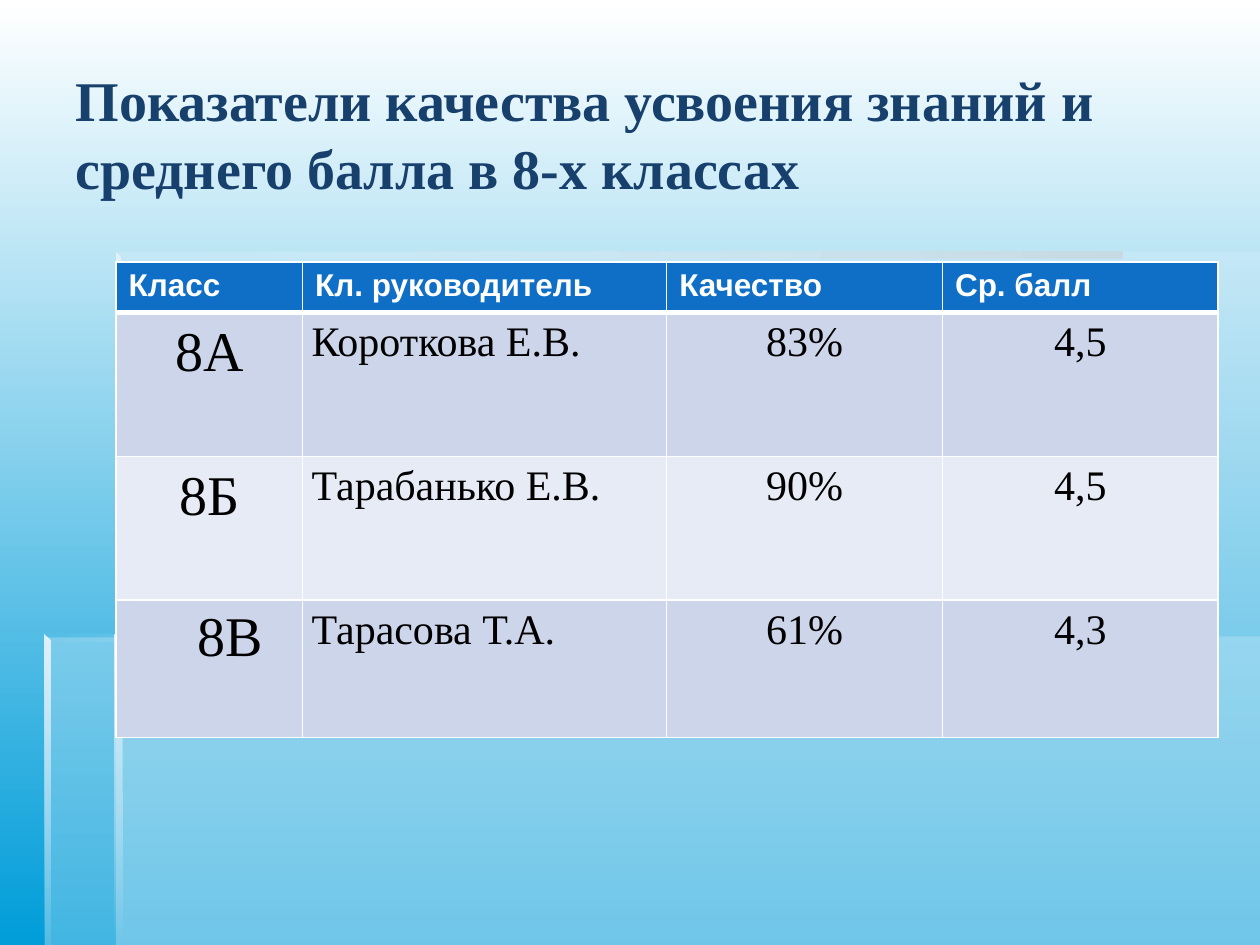
"""Builds the slide on knowledge quality and average marks in the 8th forms."""
from lxml import etree
from pptx import Presentation
from pptx.dml import color
from pptx.enum import text
from pptx.oxml import ns
from pptx.util import Cm, Pt

SERIF, SANS = "Times New Roman", "Arial"
WIDTH, HEIGHT = 25.4, 19.05
TITLE = "Показатели качества усвоения знаний и среднего балла в 8-х классах"
HEADINGS = ["Класс", "Кл. руководитель", "Качество", "Ср. балл"]
CLASSES = [
    ("8А", "Короткова Е.В.", "83%", "4,5"),
    ("8Б", "Тарабанько Е.В.", "90%", "4,5"),
    ("8В", "Тарасова Т.А.", "61%", "4,3"),
]
COLUMN_WIDTHS = [3.76, 7.34, 5.56, 5.56]
ROW_HEIGHTS = [1.02, 2.9, 2.9, 2.77]
BANDS = ["CCD5EA", "E7EBF5"]
PALE, LIGHT, GREY = "DBEFF9", "E0F1FA", "C9DBE4"
PANELS = [
    [(2.34, 12.83), (2.34, HEIGHT), (WIDTH, HEIGHT), (WIDTH, 12.83)],
    [(2.39, 12.85), (0.91, 12.85), (0.91, HEIGHT), (WIDTH, HEIGHT), (WIDTH, 5.08), (2.39, 5.08)],
]
ACROSS, DOWN = 0, 270
EDGES = [
    ([(2.34, 5.08), (2.34, 5.21), (22.63, 5.21), (22.63, 5.08)], ACROSS, (PALE, 0), (GREY, 100)),
    ([(2.34, 5.08), (2.34, 12.95), (2.46, 12.95), (2.44, 5.18)], DOWN, (LIGHT, 100), (PALE, 100)),
    ([(2.31, HEIGHT), (2.46, HEIGHT), (2.44, 12.9), (2.31, 12.8)], DOWN, (LIGHT, 100), (PALE, 0)),
    ([(0.89, 12.8), (0.89, 12.93), (13.59, 12.93), (13.59, 12.8)], ACROSS, (PALE, 0), (GREY, 100)),
    ([(0.89, 12.8), (0.89, HEIGHT), (1.02, HEIGHT), (1.02, 12.93)], DOWN, (LIGHT, 100), (PALE, 10)),
]


def rgb(value):
    return color.RGBColor.from_string(value)


def set_opacity(parent, percent):
    for shade in parent.iter(ns.qn("a:srgbClr")):
        etree.SubElement(shade, ns.qn("a:alpha"), val=str(percent * 1000))


def fill_gradient(fill, angle, *stops):
    fill.gradient()
    fill.gradient_angle = angle
    for stop, (shade, percent) in zip(fill.gradient_stops, stops):
        stop.color.rgb = rgb(shade)
    return fill.gradient_stops


def add_outline(slide, points):
    start, *rest = [(Cm(x), Cm(y)) for x, y in points]
    builder = slide.shapes.build_freeform(*start)
    builder.add_line_segments(rest, close=True)
    outline = builder.convert_to_shape()
    outline.shadow.inherit = False
    outline.line.fill.background()
    return outline


def add_background(slide):
    fill_gradient(slide.background.fill, DOWN, ("FFFFFF", 100), ("009DD9", 100))
    for points in PANELS:
        panel = add_outline(slide, points)
        panel.fill.solid()
        panel.fill.fore_color.rgb = rgb(PALE)
        set_opacity(panel.element.spPr, 30)
    for points, angle, *stops in EDGES:
        edge = add_outline(slide, points)
        fill_gradient(edge.fill, angle, *stops)
        marks = edge.element.spPr.iter(ns.qn("a:gs"))
        for mark, (shade, percent) in zip(marks, stops):
            set_opacity(mark, percent)


def write(paragraph, words, font, size, shade, bold=False):
    run = paragraph.add_run()
    run.text = words
    run.font.name, run.font.size, run.font.bold = font, Pt(size), bold
    run.font.color.rgb = rgb(shade)


def add_title(slide):
    title = slide.shapes.title
    title.left, title.top, title.width, title.height = Cm(1.27), Cm(0.69), Cm(23.29), Cm(3.99)
    title.text_frame.vertical_anchor = text.MSO_ANCHOR.MIDDLE
    title.text_frame.word_wrap = True
    paragraph = title.text_frame.paragraphs[0]
    paragraph.alignment = text.PP_ALIGN.LEFT
    write(paragraph, TITLE, SERIF, 32, "17406D", True)


def format_cell(cell, shade, bottom_width):
    cell.fill.solid()
    cell.fill.fore_color.rgb = rgb(shade)
    properties = cell._tc.get_or_add_tcPr()
    for place, side in enumerate(("lnL", "lnR", "lnT", "lnB")):
        width = bottom_width if side == "lnB" else 1
        border = etree.Element(ns.qn("a:" + side), w=str(Pt(width)))
        solid = etree.SubElement(border, ns.qn("a:solidFill"))
        etree.SubElement(solid, ns.qn("a:srgbClr"), val="FFFFFF")
        properties.insert(place, border)


def add_marks_table(slide):
    table = slide.shapes.add_table(
        len(CLASSES) + 1, len(HEADINGS), Cm(2.34), Cm(5.28),
        Cm(sum(COLUMN_WIDTHS)), Cm(sum(ROW_HEIGHTS))).table
    for column, width in zip(table.columns, COLUMN_WIDTHS):
        column.width = Cm(width)
    for row, height in zip(table.rows, ROW_HEIGHTS):
        row.height = Cm(height)
    for cell, heading in zip(table.rows[0].cells, HEADINGS):
        format_cell(cell, "0F6FC6", 3)
        write(cell.text_frame.paragraphs[0], heading, SANS, 18, "FFFFFF", True)
    align = text.PP_ALIGN
    alignments = [align.CENTER, align.JUSTIFY, align.CENTER, align.CENTER]
    for r, entries in enumerate(CLASSES):
        for c, entry in enumerate(entries):
            cell = table.cell(r + 1, c)
            format_cell(cell, BANDS[r % 2], 1)
            paragraph = cell.text_frame.paragraphs[0]
            write(paragraph, entry, SERIF, 24 if c else 32, "000000")
            if entry == "8В":
                cell.margin_left = Cm(1.65)
                continue
            cell.margin_left = cell.margin_right = Cm(0.18)
            cell.margin_top = cell.margin_bottom = 0
            paragraph.alignment = alignments[c]
            paragraph.line_spacing = 1.15


def main():
    deck = Presentation()
    deck.slide_width, deck.slide_height = Cm(WIDTH), Cm(HEIGHT)
    slide = deck.slides.add_slide(deck.slide_layouts.get_by_name("Title Only"))
    add_background(slide)
    add_title(slide)
    add_marks_table(slide)
    deck.save("out.pptx")


if __name__ == "__main__":
    main()
